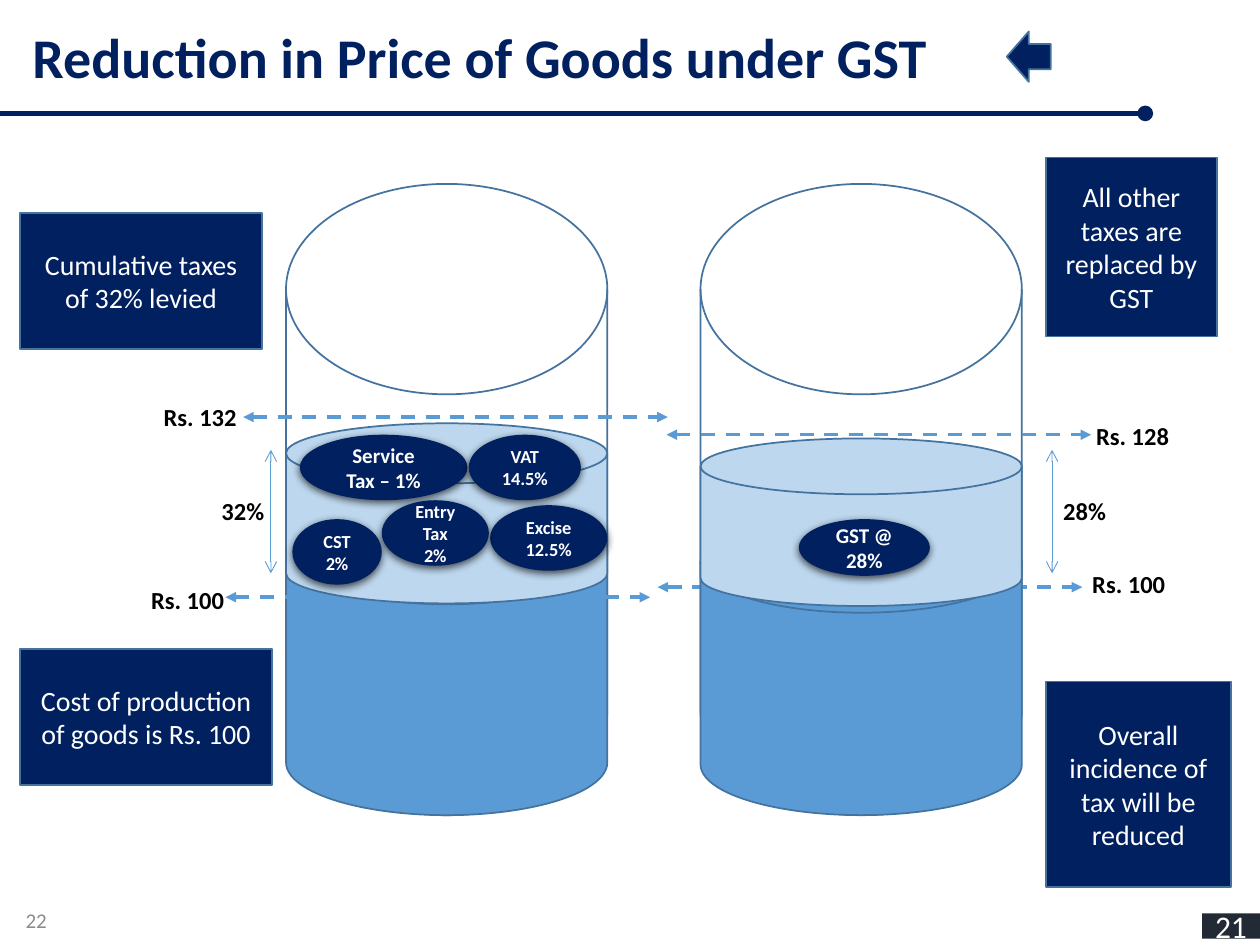
from lxml.etree import SubElement
from pptx import Presentation
from pptx.dml.color import RGBColor
from pptx.enum.dml import MSO_LINE
from pptx.enum.shapes import MSO_CONNECTOR, MSO_SHAPE
from pptx.enum.text import MSO_ANCHOR, PP_ALIGN
from pptx.oxml.ns import qn
from pptx.util import Inches, Pt

COLORS = {
    "navy": "002060", "blue": "5B9BD5", "pale": "BDD7EE", "outline": "43739E",
    "dark": "222A35", "grey": "8C8C8C", "black": "000000", "white": "FFFFFF",
}


def color(name):
    return RGBColor.from_string(COLORS[name])


class SlideBuilder:
    font_name = "Calibri"

    def __init__(self, slide):
        self.slide = slide

    def set_text(self, shape, text, size, text_color, bold=False, align=PP_ALIGN.LEFT):
        shape.text_frame.text = text
        for paragraph in shape.text_frame.paragraphs:
            paragraph.alignment = align
            paragraph.font.name = self.font_name
            paragraph.font.size = Pt(size)
            paragraph.font.bold = bold
            paragraph.font.color.rgb = color(text_color)

    def text(self, box, text, size=14, text_color="black", bold=True,
             align=PP_ALIGN.LEFT, wrap=True, anchor=MSO_ANCHOR.TOP):
        shape = self.slide.shapes.add_textbox(*map(Inches, box))
        shape.text_frame.word_wrap = wrap
        shape.text_frame.vertical_anchor = anchor
        self.set_text(shape, text, size, text_color, bold, align)

    def shape(self, kind, box, fill=None, outline="outline"):
        shape = self.slide.shapes.add_shape(kind, *map(Inches, box))
        shape.shadow.inherit = False
        if fill:
            shape.fill.solid()
            shape.fill.fore_color.rgb = color(fill)
        else:
            shape.fill.background()
        if outline:
            shape.line.color.rgb = color(outline)
            shape.line.width = Pt(1)
        else:
            shape.line.fill.background()
        return shape

    def cylinder(self, left, top, height, fill=None):
        box = (left, top, 2.55, height)
        self.shape(MSO_SHAPE.FLOWCHART_MAGNETIC_DISK, box, fill)

    def note(self, box, text):
        shape = self.shape(MSO_SHAPE.RECTANGLE, box, "navy")
        self.set_text(shape, text, 16, "white", align=PP_ALIGN.CENTER)

    def tax_bubble(self, box, text, size=10.5):
        """Add a navy ellipse with a soft shadow straight below it."""
        shape = self.shape(MSO_SHAPE.OVAL, box, "navy", outline=None)
        self.set_text(shape, text, size, "white", True, PP_ALIGN.CENTER)
        effects = shape._element.spPr.find(qn("a:effectLst"))
        shadow = SubElement(effects, qn("a:outerShdw"), blurRad=str(Pt(4.5)),
                            dist=str(Pt(1.5)), dir="5400000", rotWithShape="0")
        shade = SubElement(shadow, qn("a:srgbClr"), val=COLORS["black"])
        SubElement(shade, qn("a:alpha"), val="63000")

    def line(self, start, end, line_color, width, head=None, tail=None, dash=False):
        """Add a line; head is the marker at its start, tail the one at its end."""
        connector = self.slide.shapes.add_connector(
            MSO_CONNECTOR.STRAIGHT, *map(Inches, (*start, *end)))
        connector.line.color.rgb = color(line_color)
        connector.line.width = Pt(width)
        if dash:
            connector.line.dash_style = MSO_LINE.DASH
        properties = connector._element.spPr
        outline = properties.find(qn("a:ln"))
        for tag, marker in (("a:headEnd", head), ("a:tailEnd", tail)):
            if marker:
                SubElement(outline, qn(tag), type=marker)
        SubElement(properties, qn("a:effectLst"))

    def price_level(self, left, y, label_left, label_top, label):
        self.line((left, y), (left + 3.37, y), "blue", 2, "triangle", "triangle", True)
        self.text((label_left, label_top, 1.08, 0.34), label)

    def tax_span(self, x, label_left, label):
        self.line((x, 3.57), (x, 4.55), "blue", 0.5, "arrow", "arrow")
        self.text((label_left, 3.89, 0.57, 0.34), label)


def main():
    presentation = Presentation()
    presentation.slide_width = Inches(10)
    presentation.slide_height = Inches(7.5)
    slide = presentation.slides.add_slide(presentation.slide_layouts[6])
    builder = SlideBuilder(slide)
    before, after = 2.27, 5.56  # left edges of the two cylinders

    # Heading and page number
    builder.line((0, 0.9), (9.09, 0.9), "navy", 3, tail="oval")
    builder.text((0.16, 0.13, 7.37, 0.64), "Reduction in Price of Goods under GST",
                 32, "navy", wrap=False)
    builder.shape(MSO_SHAPE.LEFT_ARROW, (7.99, 0.25, 0.35, 0.4), "navy")
    builder.text((-1.78, 7.1, 2.25, 0.4), "22", 12, "grey", bold=False,
                 align=PP_ALIGN.RIGHT, anchor=MSO_ANCHOR.MIDDLE)

    # Cylinders; the price lines at cost level run behind the fillings
    for left in (before, after):
        builder.cylinder(left, 1.46, 5.01)
    builder.cylinder(before, 3.96, 2.51, "blue")
    builder.price_level(1.93, 3.31, 1.2, 3.14, "Rs. 132")
    builder.price_level(5.29, 3.45, 8.6, 3.29, "Rs. 128")
    builder.price_level(1.79, 4.74, 1.1, 4.59, "Rs. 100")
    builder.price_level(5.22, 4.66, 8.57, 4.47, "Rs. 100")
    builder.cylinder(after, 4.06, 2.41, "blue")
    builder.cylinder(before, 3.36, 1.43, "pale")
    builder.cylinder(after, 3.48, 1.33, "pale")
    builder.tax_span(2.15, 1.66, "32%")
    builder.tax_span(8.35, 8.34, "28%")

    # Taxes inside the cylinders
    builder.tax_bubble((2.38, 3.45, 1.33, 0.52), "Service\nTax – 1%", 12)
    builder.tax_bubble((3.72, 3.45, 0.89, 0.52), "VAT 14.5%")
    builder.tax_bubble((3.89, 4.01, 0.93, 0.52), "Excise 12.5%")
    builder.tax_bubble((3.03, 3.97, 0.85, 0.52), "Entry\nTax 2%")
    builder.tax_bubble((2.32, 4.12, 0.71, 0.52), "CST 2%")
    builder.tax_bubble((6.34, 4.12, 1.04, 0.45), "GST @ 28%", 12)

    # Explanations
    builder.note((0.16, 5.15, 2, 1.08), "Cost of production of goods is Rs. 100")
    builder.note((0.16, 1.69, 1.92, 1.08), "Cumulative taxes of 32% levied")
    builder.note((8.3, 1.25, 1.36, 1.42), "All other taxes are replaced by GST")
    builder.note((8.3, 5.41, 1.47, 1.63), "Overall incidence of tax will be reduced")

    badge = builder.shape(MSO_SHAPE.RECTANGLE, (9.54, 7.25, 0.46, 0.2), "dark", None)
    builder.set_text(badge, "21", 18, "white", align=PP_ALIGN.CENTER)

    presentation.save("out.pptx")


if __name__ == "__main__":
    main()
